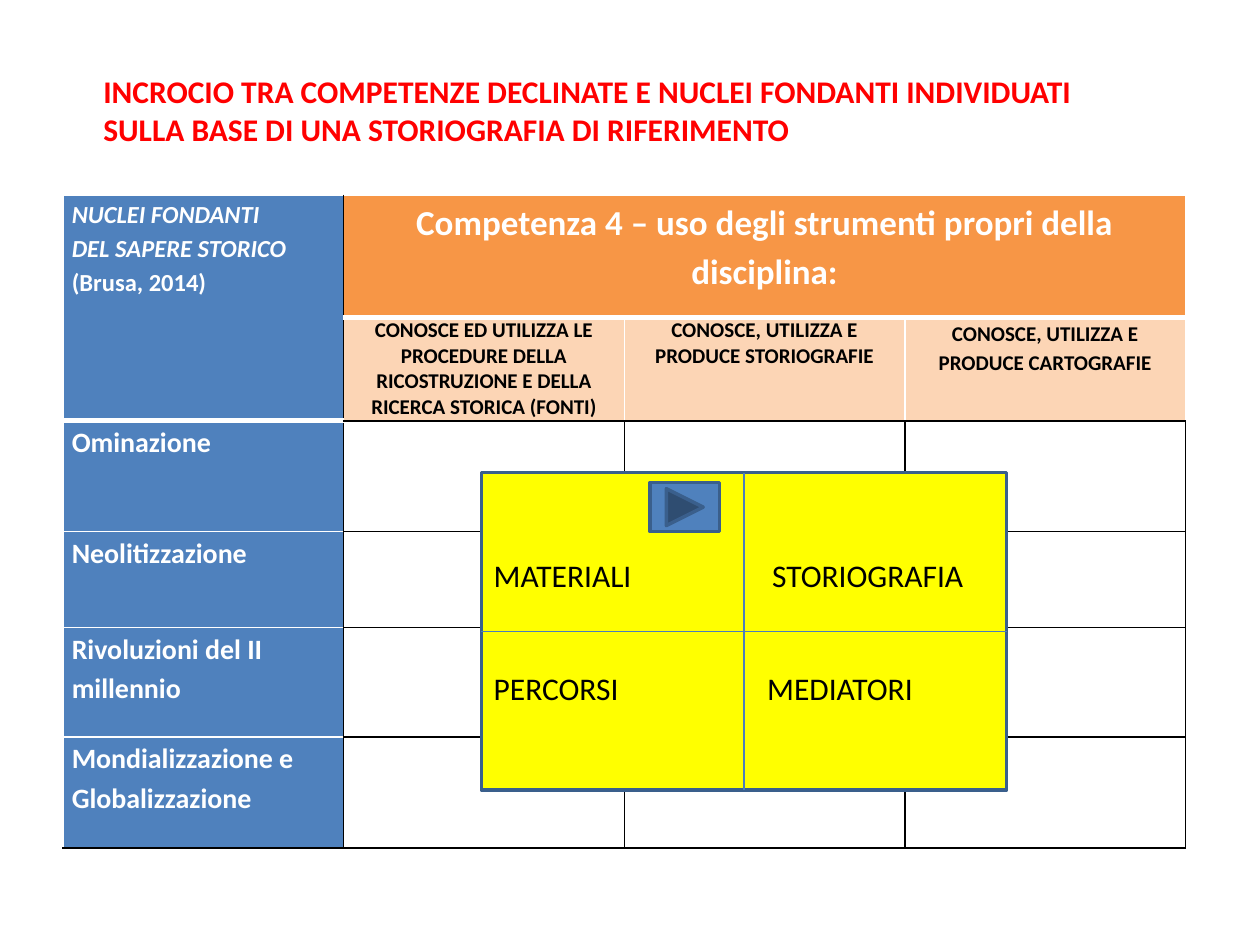
from lxml import etree
from pptx import Presentation
from pptx.dml.color import RGBColor
from pptx.enum.shapes import MSO_CONNECTOR, MSO_SHAPE
from pptx.enum.text import MSO_ANCHOR, MSO_AUTO_SIZE, PP_ALIGN
from pptx.oxml.ns import qn
from pptx.util import Inches, Pt

RECTANGLE = MSO_SHAPE.RECTANGLE
FORWARD_BUTTON = MSO_SHAPE.ACTION_BUTTON_FORWARD_OR_NEXT
STRAIGHT = MSO_CONNECTOR.STRAIGHT
TOP, MIDDLE = MSO_ANCHOR.TOP, MSO_ANCHOR.MIDDLE
LEFT, CENTER = PP_ALIGN.LEFT, PP_ALIGN.CENTER
NO_AUTOFIT = MSO_AUTO_SIZE.NONE

WHITE = RGBColor(0xFF, 0xFF, 0xFF)
BLACK = RGBColor(0, 0, 0)
RED = RGBColor(0xFF, 0, 0)
YELLOW = RGBColor(0xFF, 0xFF, 0)
BLUE = RGBColor(0x4F, 0x81, 0xBD)
DARK_BLUE = RGBColor(0x3A, 0x5F, 0x8C)
LINE_BLUE = RGBColor(0x4B, 0x7E, 0xBC)
ORANGE = RGBColor(0xF7, 0x96, 0x46)
PEACH = RGBColor(0xFC, 0xD5, 0xB5)

TITLE = ("INCROCIO TRA COMPETENZE DECLINATE E NUCLEI FONDANTI INDIVIDUATI "
         "SULLA BASE DI UNA STORIOGRAFIA DI RIFERIMENTO")
COMPETENCE = "Competenza 4 – uso degli strumenti propri della disciplina:"
SKILLS = [
    ("CONOSCE ED UTILIZZA LE PROCEDURE DELLA RICOSTRUZIONE E DELLA RICERCA STORICA (FONTI)", 1),
    ("CONOSCE, UTILIZZA E PRODUCE STORIOGRAFIE", 1),
    ("CONOSCE, UTILIZZA E PRODUCE CARTOGRAFIE", 1.15),
]
CORE_TOPICS = ["Ominazione", "Neolitizzazione", "Rivoluzioni del II millennio",
               "Mondializzazione e Globalizzazione"]
ROW_HEIGHTS = [0.97, 0.82, 0.88, 0.76, 0.87, 0.88]
COLUMN_COUNT = 4


def cell_borders(row, column):
    """Return the colour and width of each side of a table cell."""
    last_row = len(ROW_HEIGHTS) - 1
    thin_white, thick_white, thin_black = (WHITE, 1), (WHITE, 3), (BLACK, 1)
    if column == 0:
        bottom = {1: thick_white, last_row: thin_black}.get(row, thin_white)
        top = thick_white if row == 2 else thin_white
        return {"L": thin_white, "R": thin_black, "T": top, "B": bottom}
    if row < 2:
        return {"L": thin_black if column == 1 else thin_white, "R": thin_white,
                "T": thick_white if row == 1 else thin_white,
                "B": thick_white if row == 0 else thin_black}
    return dict.fromkeys("LRTB", thin_black)


class SlideBuilder:
    """Hold the current slide and its text style, and add elements to it."""

    def __init__(self, slide, font_name):
        self.slide = slide
        self.font_name = font_name

    def add_text(self, paragraph, text, color, **formats):
        run = paragraph.add_run()
        run.text = text
        run.font.color.rgb = color
        for name, value in {"name": self.font_name, **formats}.items():
            setattr(run.font, name, value)

    def title(self, text, left, top, width, height):
        title = self.slide.shapes.title
        box = {"left": left, "top": top, "width": width, "height": height}
        for name, value in box.items():
            setattr(title, name, Inches(value))
        frame = title.text_frame
        layout = {"word_wrap": True, "auto_size": NO_AUTOFIT, "vertical_anchor": TOP}
        for name, value in layout.items():
            setattr(frame, name, value)
        frame.paragraphs[0].alignment = LEFT
        self.add_text(frame.paragraphs[0], text, RED, size=Pt(18), bold=True)

    def table(self, left, top, width, row_heights, column_count):
        frame = self.slide.shapes.add_table(
            len(row_heights), column_count, Inches(left), Inches(top),
            Inches(width), Inches(sum(row_heights)))
        table = frame.table
        table.first_row = table.horz_banding = False
        for row, height in zip(table.rows, row_heights):
            row.height = Inches(height)
        for r in range(len(row_heights)):
            for c in range(column_count):
                cell = table.cell(r, c)
                margins = {"margin_left": 0.07, "margin_right": 0.07,
                           "margin_top": 0, "margin_bottom": 0}
                for name, value in margins.items():
                    setattr(cell, name, Inches(value))
                if c == 0:
                    color = BLUE
                else:
                    color = {0: ORANGE, 1: PEACH}.get(r, WHITE)
                cell.fill.solid()
                cell.fill.fore_color.rgb = color
                self.borders(cell, cell_borders(r, c))
        return table

    def borders(self, cell, sides):
        properties = cell._tc.get_or_add_tcPr()
        for position, (side, (color, points)) in enumerate(sides.items()):
            line = etree.Element(qn(f"a:ln{side}"), w=str(Pt(points)))
            fill = etree.SubElement(line, qn("a:solidFill"))
            etree.SubElement(fill, qn("a:srgbClr"), val=str(color))
            properties.insert(position, line)

    def cell_text(self, cell, text, size, color=WHITE, align=LEFT, spacing=1.15):
        paragraph = cell.text_frame.paragraphs[0]
        paragraph.alignment = align
        paragraph.line_spacing = spacing
        self.add_text(paragraph, text, color, size=Pt(size), bold=True)

    def shape(self, kind, left, top, width, height, fill):
        shape = self.slide.shapes.add_shape(
            kind, Inches(left), Inches(top), Inches(width), Inches(height))
        shape.shadow.inherit = False
        shape.fill.solid()
        shape.fill.fore_color.rgb = fill
        shape.line.color.rgb = DARK_BLUE
        shape.line.width = Pt(2)
        return shape

    def tabbed_line(self, paragraph, first, second, tab, space_before):
        paragraph.alignment = LEFT
        paragraph.space_before = Pt(space_before)
        stops = etree.SubElement(paragraph._p.get_or_add_pPr(), qn("a:tabLst"))
        etree.SubElement(stops, qn("a:tab"), pos=str(Inches(tab)), algn="l")
        self.add_text(paragraph, f"{first}\t{second}", BLACK, size=Pt(18))

    def line(self, x1, y1, x2, y2):
        line = self.slide.shapes.add_connector(
            STRAIGHT, Inches(x1), Inches(y1), Inches(x2), Inches(y2))
        line.line.color.rgb = LINE_BLUE
        line.line.width = Pt(0.75)
        etree.SubElement(line._element.spPr, qn("a:effectLst"))


def main():
    """Build the slide and save it."""
    presentation = Presentation()
    presentation.slide_width, presentation.slide_height = Inches(10), Inches(7.5)
    slide = presentation.slides.add_slide(presentation.slide_layouts[5])
    builder = SlideBuilder(slide, "Calibri")

    grid = builder.table(0.5, 1.55, 8.91, ROW_HEIGHTS, COLUMN_COUNT)
    grid.cell(0, 0).merge(grid.cell(1, 0))
    grid.cell(0, 1).merge(grid.cell(0, COLUMN_COUNT - 1))
    core = grid.cell(0, 0)
    builder.cell_text(core, "NUCLEI FONDANTI", 14)
    core.text_frame.paragraphs[0].runs[0].font.italic = True
    source = core.text_frame.add_paragraph()
    source.line_spacing = 1.15
    for text, italic in [("DEL SAPERE STORICO ", True), ("(Brusa, 2014)", False)]:
        builder.add_text(source, text, WHITE, size=Pt(14), bold=True, italic=italic)
    builder.cell_text(grid.cell(0, 1), COMPETENCE, 20, align=CENTER)
    for column, (skill, spacing) in enumerate(SKILLS, 1):
        builder.cell_text(grid.cell(1, column), skill, 12, BLACK, CENTER, spacing)
    for row, topic in enumerate(CORE_TOPICS, 2):
        builder.cell_text(grid.cell(row, 0), topic, 16)

    builder.title(TITLE, 0.72, 0.52, 8.35, 0.71)

    left, top, width, height = 3.82, 3.75, 4.17, 2.52
    panel = builder.shape(RECTANGLE, left, top, width, height, YELLOW)
    panel_text = panel.text_frame
    panel_text.word_wrap = True
    panel_text.vertical_anchor = MIDDLE
    builder.tabbed_line(panel_text.paragraphs[0], "MATERIALI", "STORIOGRAFIA", 2.21, 0)
    builder.tabbed_line(panel_text.add_paragraph(), "PERCORSI", "MEDIATORI", 2.17, 43)
    center_x, center_y = left + width / 2, top + height / 2
    builder.line(center_x, top, center_x, top + height)
    builder.line(left, center_y, left + width, center_y)
    builder.shape(FORWARD_BUTTON, 5.16, 3.83, 0.55, 0.39, BLUE)

    presentation.save("out.pptx")


if __name__ == "__main__":
    main()
